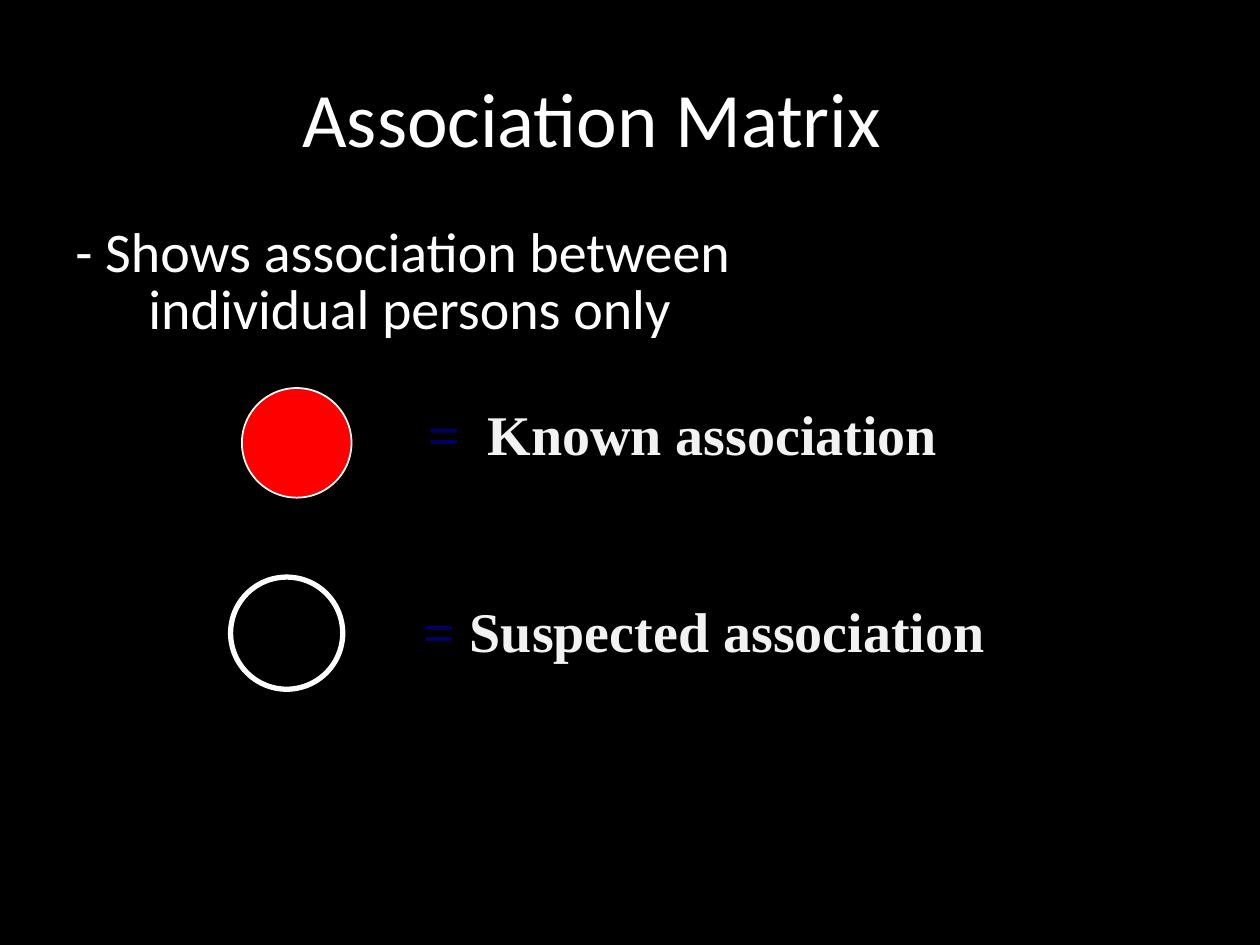
"""Build the association matrix legend slide."""
from dataclasses import dataclass
from typing import Optional

from lxml import etree
from pptx import Presentation
from pptx.dml.color import RGBColor
from pptx.enum import shapes, text
from pptx.oxml.ns import qn
from pptx.util import Inches, Pt


@dataclass(frozen=True)
class Theme:
    back: str = "000000"
    white: str = "FFFFFF"
    label: str = "F2F2F2"
    equals: str = "000066"
    known: str = "FF0000"
    sans: str = "Calibri"
    serif: str = "Times New Roman"
    title_size: int = 44
    body_size: int = 32
    spacing: float = 0.85


@dataclass(frozen=True)
class Key:
    label: str
    circle: tuple[float, float, float]
    box: tuple[float, float, float, float]
    tab: float
    line: float
    fill: Optional[str] = None


T = Theme()
KEYS = (
    Key("Known association", (1.92, 3.08, 0.87), (3.3, 3.2, 4.29, 0.56), 0.47, 1, T.known),
    Key("Suspected association", (1.83, 4.58, 0.89), (3.26, 4.76, 4.7, 0.56), 0.37, 3),
)


def rgb(value: str) -> RGBColor:
    return RGBColor.from_string(value)


def add_text(p, content: str, *, size: int = T.body_size, font: str = T.sans,
             color: str = T.white, bold: bool = False) -> None:
    first, *rest = content.split("\n")
    for i, line in enumerate([first, *rest]):
        if i:
            p.add_line_break()
        r = p.add_run()
        r.text = line
        r.font.size, r.font.name, r.font.bold = Pt(size), font, bold
        r.font.color.rgb = rgb(color)


def add_box(s, box: tuple[float, float, float, float], anchor):
    tf = s.shapes.add_textbox(*map(Inches, box)).text_frame
    tf.word_wrap = True
    tf.vertical_anchor = anchor
    p = tf.paragraphs[0]
    p.line_spacing = T.spacing
    return p


def add_title(s, content: str) -> None:
    sp = s.shapes.title
    sp.left, sp.top, sp.width, sp.height = map(Inches, (0.5, 0.3, 9, 1.25))
    tf = sp.text_frame
    tf.margin_left = Inches(1.9)
    tf.vertical_anchor = text.MSO_ANCHOR.MIDDLE
    p = tf.paragraphs[0]
    p.alignment = text.PP_ALIGN.LEFT
    add_text(p, content, size=T.title_size)


def add_body(s, content: str) -> None:
    p = add_box(s, (0.5, 1.75, 9, 4.95), text.MSO_ANCHOR.TOP)
    hang = Inches(0.58)
    pPr = p._p.get_or_add_pPr()
    pPr.set("marL", str(hang))
    pPr.set("indent", str(-hang))
    add_text(p, content)


def add_key(s, key: Key) -> None:
    left, top, size = map(Inches, key.circle)
    sp = s.shapes.add_shape(shapes.MSO_SHAPE.OVAL, left, top, size, size)
    sp.shadow.inherit = False
    sp.line.color.rgb = rgb(T.white)
    sp.line.width = Pt(key.line)
    if key.fill:
        sp.fill.solid()
        sp.fill.fore_color.rgb = rgb(key.fill)
    else:
        sp.fill.background()
    p = add_box(s, key.box, text.MSO_ANCHOR.MIDDLE)
    tabs = etree.SubElement(p._p.get_or_add_pPr(), qn("a:tabLst"))
    etree.SubElement(tabs, qn("a:tab"), pos=str(Inches(key.tab)), algn="l")
    add_text(p, "=\t", font=T.serif, color=T.equals, bold=True)
    add_text(p, key.label, font=T.serif, color=T.label, bold=True)


def main() -> None:
    prs = Presentation()
    prs.slide_width, prs.slide_height = Inches(10), Inches(7.5)
    s = prs.slides.add_slide(prs.slide_layouts[5])
    s.background.fill.solid()
    s.background.fill.fore_color.rgb = rgb(T.back)
    add_title(s, "Association Matrix")
    add_body(s, "- Shows association between\nindividual persons only")
    for key in KEYS:
        add_key(s, key)
    prs.save("out.pptx")


if __name__ == "__main__":
    main()
